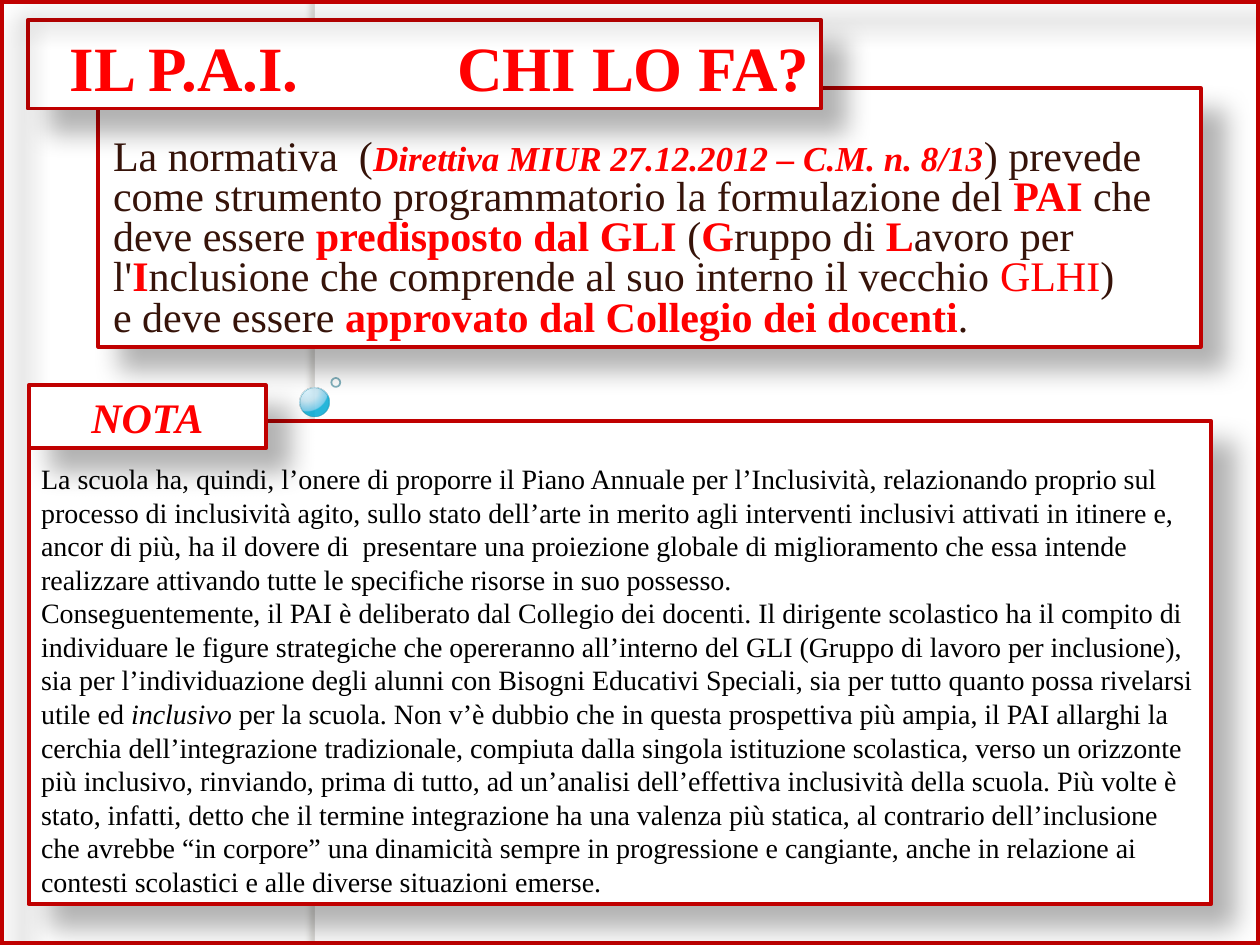
from lxml import etree
from pptx import Presentation
from pptx import util as u
from pptx.dml.color import RGBColor
from pptx.enum import shapes, text
from pptx.oxml import ns

COLORS = {
    "white": "FFFFFF", "border": "C00000", "red": "FF0000",
    "brown": "361309", "black": "000000", "strip_shadow": "736F63",
    "bubble_edge": "308EA5", "ring": "318093",
}
BUBBLE_STOPS = [(0, "DAF4FF", 95), (50, "C3E3F0", 90),
                (95, "6BC7E8", 88), (100, "00ABD5", 85)]
FONT = "Times New Roman"
KEY = {"color": "red", "bold": True}

NORM = [
    ("La normativa  (", {}),
    ("Direttiva MIUR 27.12.2012 – C.M. n. 8/13", {**KEY, "italic": True, "size": 20}),
    (") prevede come strumento programmatorio la formulazione del ", {}),
    ("PAI ", KEY), ("che deve essere ", {}), ("predisposto dal GLI ", KEY),
    ("(", {}), ("G", KEY), ("ruppo di ", {}), ("L", KEY), ("avoro per l'", {}),
    ("I", KEY), ("nclusione che comprende al suo interno il vecchio ", {}),
    ("GLHI", {"color": "red"}), (")", {}), None, ("e deve essere ", {}),
    ("approvato dal Collegio dei docenti", KEY), (".", {}),
]
NOTE = [
    [("La scuola ha, quindi, l’onere di proporre il Piano Annuale per l’Inclusività, "
      "relazionando proprio sul processo di inclusività agito, sullo stato dell’arte in "
      "merito agli interventi inclusivi attivati in itinere e, ancor di più, ha il dovere "
      "di  presentare una proiezione globale di miglioramento che essa intende realizzare "
      "attivando tutte le specifiche risorse in suo possesso.", {})],
    [("Conseguentemente, il PAI è deliberato dal Collegio dei docenti. Il dirigente "
      "scolastico ha il compito di individuare le figure strategiche che opereranno "
      "all’interno del GLI (Gruppo di lavoro per inclusione), sia per l’individuazione "
      "degli alunni con Bisogni Educativi Speciali, sia per tutto quanto possa rivelarsi "
      "utile ed ", {}),
     ("inclusivo ", {"italic": True}),
     ("per la scuola. Non v’è dubbio che in questa prospettiva più ampia, il PAI allarghi "
      "la cerchia dell’integrazione tradizionale, compiuta dalla singola istituzione "
      "scolastica, verso un orizzonte più inclusivo, rinviando, prima di tutto, ad "
      "un’analisi dell’effettiva inclusività della scuola. Più volte è stato, infatti, "
      "detto che il termine integrazione ha una valenza più statica, al contrario "
      "dell’inclusione che avrebbe “in corpore” una dinamicità sempre in progressione e "
      "cangiante, anche in relazione ai contesti scolastici e alle diverse situazioni "
      "emerse.", {})],
]


def rgb(name):
    return RGBColor.from_string(COLORS[name])


def child(parent, tag, **attributes):
    values = {key: str(value) for key, value in attributes.items()}
    return etree.SubElement(parent, ns.qn(tag), values)


def add_color(parent, value, alpha):
    child(child(parent, "a:srgbClr", val=value), "a:alpha", val=alpha * 1000)


def add_outline(slide, kind, box, fill=None, line=None, width=1):
    outline = slide.shapes.add_shape(kind, *(u.Cm(value) for value in box))
    outline.shadow.inherit = False
    if fill:
        outline.fill.solid()
        outline.fill.fore_color.rgb = rgb(fill)
    else:
        outline.fill.background()
    if line:
        outline.line.color.rgb = rgb(line)
        outline.line.width = u.Pt(width)
    else:
        outline.line.fill.background()
    return outline


def cast_shadow(outline, color="black", alpha=30, blur=15, distance=18, angle=45):
    effects = outline._element.spPr.find(ns.qn("a:effectLst"))
    shadow = child(effects, "a:outerShdw", blurRad=u.Pt(blur), dist=u.Pt(distance),
                   dir=angle * 60000, algn="tl", rotWithShape=0)
    add_color(shadow, COLORS[color], alpha)


def add_panel(slide, box, anchor, fill="white", width=2.25):
    panel = add_outline(slide, shapes.MSO_SHAPE.RECTANGLE, box, fill, "border", width)
    cast_shadow(panel)
    frame = panel.text_frame
    frame.word_wrap = True
    frame.vertical_anchor = anchor
    return frame


def write(paragraph, runs, size, color, align=text.PP_ALIGN.LEFT):
    paragraph.alignment = align
    paragraph.font.name = FONT
    paragraph.font.size = u.Pt(size)
    for part in runs:
        if part is None:
            paragraph.add_line_break()
            continue
        words, style = part
        run = paragraph.add_run()
        run.text = words
        run.font.name = FONT
        run.font.size = u.Pt(style.get("size", size))
        run.font.color.rgb = rgb(style.get("color", color))
        run.font.bold = style.get("bold")
        run.font.italic = style.get("italic")


def make_translucent(outline, alpha):
    line_color = outline._element.spPr.find(".//" + ns.qn("a:ln") + "//" + ns.qn("a:srgbClr"))
    child(line_color, "a:alpha", val=alpha * 1000)


def add_backdrop(slide, left, top, width, height):
    strip = add_outline(slide, shapes.MSO_SHAPE.RECTANGLE,
                        (left + 6.35, top, 0.2, height), "white")
    cast_shadow(strip, "strip_shadow", 25, 3, 3, 180)


def add_bubbles(slide, left, top, width, height):
    oval = shapes.MSO_SHAPE.OVAL
    bubble = add_outline(slide, oval, (left, top + height - 0.58, 0.58, 0.58),
                         line="bubble_edge", width=0.16)
    ring = add_outline(slide, oval, (left + width - 0.18, top, 0.18, 0.18), line="ring")
    for outline in (bubble, ring):
        make_translucent(outline, 60)
    properties = bubble._element.spPr
    gradient = etree.Element(ns.qn("a:gradFill"), rotWithShape="1")
    stops = child(gradient, "a:gsLst")
    for position, color, alpha in BUBBLE_STOPS:
        add_color(child(stops, "a:gs", pos=position * 1000), color, alpha)
    circle = child(gradient, "a:path", path="circle")
    child(circle, "a:fillToRect", l=25000, t=12000, r=75000, b=88000)
    properties.replace(properties.find(ns.qn("a:noFill")), gradient)


def add_norm(slide, *box):
    frame = add_panel(slide, box, text.MSO_ANCHOR.BOTTOM)
    frame.margin_left = u.Cm(0.3)
    norm = frame.paragraphs[0]
    norm.line_spacing = u.Pt(23)
    write(norm, NORM, 24, "brown")


def add_title(slide, *box):
    frame = add_panel(slide, box, text.MSO_ANCHOR.MIDDLE)
    frame.margin_left = u.Cm(0.85)
    frame.margin_right = 0
    title = frame.paragraphs[0]
    title.line_spacing = u.Pt(45)
    write(title, [("IL P.A.I.\tCHI LO FA?", KEY)], 36, "red")
    tabs = child(title._p.get_or_add_pPr(), "a:tabLst")
    child(tabs, "a:tab", pos=u.Cm(7.81), algn="l")
    default_font = title._p.pPr.find(ns.qn("a:defRPr"))
    default_font.addprevious(tabs)


def add_note(slide, left, top, width, height):
    body = add_panel(slide, (left, top + 0.71, width, height - 0.71),
                     text.MSO_ANCHOR.BOTTOM)
    for index, runs in enumerate(NOTE):
        paragraph = body.add_paragraph() if index else body.paragraphs[0]
        write(paragraph, runs, 16, "black")
    label = add_panel(slide, (left, top, 4.78, 1.27), text.MSO_ANCHOR.MIDDLE)
    write(label.paragraphs[0], [("NOTA", {**KEY, "italic": True})], 24, "red",
          text.PP_ALIGN.CENTER)


def main():
    deck = Presentation()
    deck.slide_width, deck.slide_height = u.Cm(25.4), u.Cm(19.05)
    slide = deck.slides.add_slide(deck.slide_layouts[6])
    page = (0, 0, 25.4, 19.05)
    add_backdrop(slide, *page)
    add_bubbles(slide, 6.05, 7.62, 0.81, 0.78)
    add_norm(slide, 1.98, 1.78, 22.23, 5.21)
    add_title(slide, 0.56, 0.41, 16, 1.78)
    add_panel(slide, page, text.MSO_ANCHOR.MIDDLE, fill=None, width=4.5)
    add_note(slide, 0.58, 7.77, 23.83, 10.46)
    deck.save("out.pptx")


if __name__ == "__main__":
    main()
